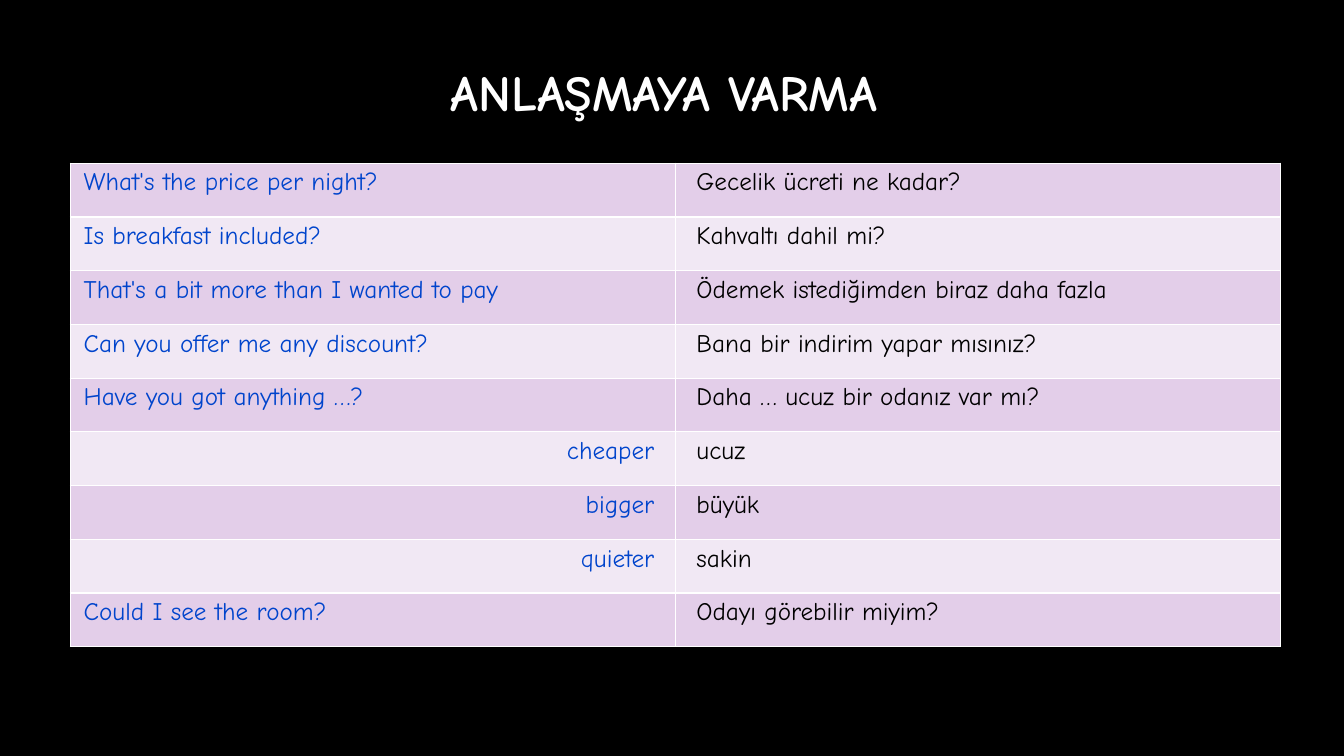
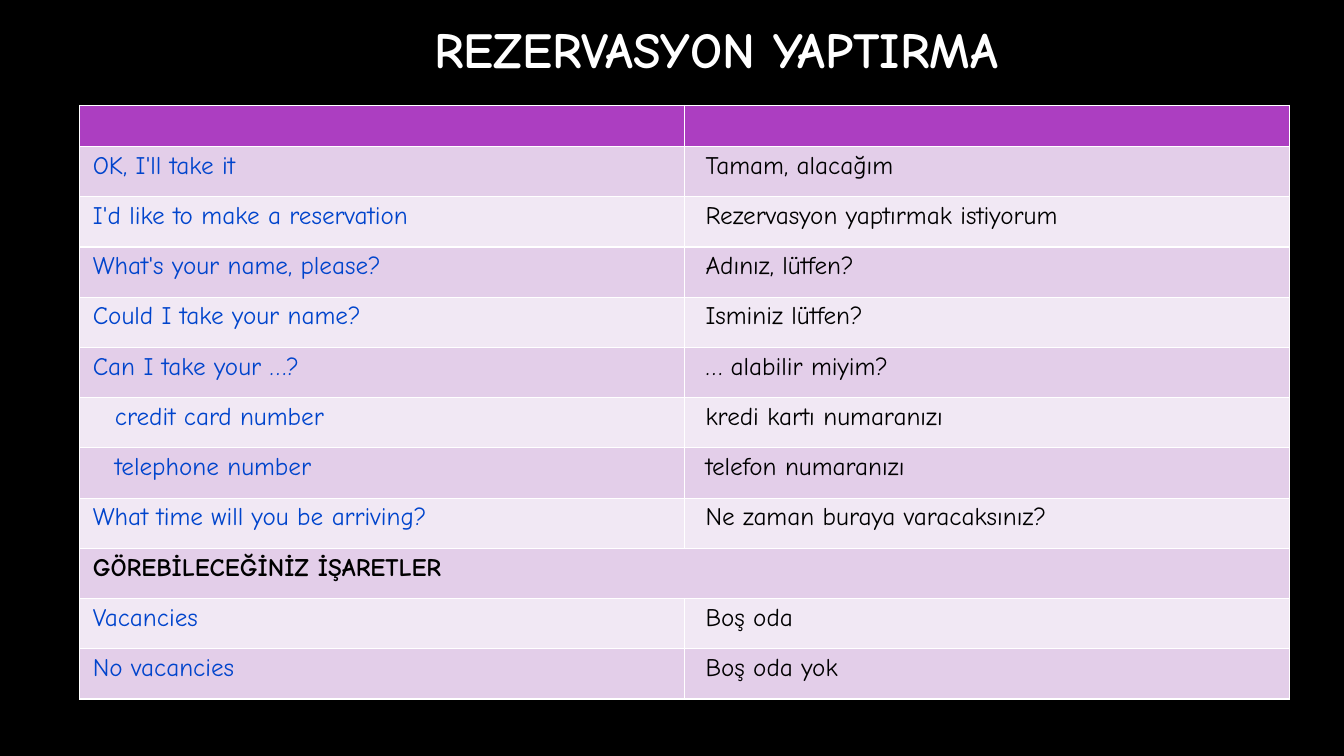
from dataclasses import dataclass

from lxml.etree import SubElement
from pptx import Presentation
from pptx.dml.color import RGBColor
from pptx.enum.text import MSO_ANCHOR, PP_ALIGN
from pptx.oxml.ns import qn
from pptx.util import Pt

# Shared look
FONT = "Comic Neue"
BLACK, WHITE, BLUE = "000000", "FFFFFF", "0044CC"
HEADER_FILL = "AC3EC1"
BAND_FILLS = ("E3CEE9", "F1E8F4")
OUTER, INNER, INDENT = 9.4, 15.1, 25.2  # side margins of the cells
COLUMN_WIDTH = 432
TITLE_WIDTH = 608.4


@dataclass
class Phrase:
    english: str
    turkish: str = ""
    left_margin: float = OUTER
    align: PP_ALIGN = PP_ALIGN.LEFT
    heading: bool = False


@dataclass
class Lesson:
    title: str
    title_left: float
    title_top: float
    title_height: float
    table_left: float
    table_top: float
    row_height: float
    phrases: list[Phrase]
    header_height: float = 0


def color(value: str) -> RGBColor:
    return RGBColor.from_string(value)


def write(frame, text: str, *, size: float = 18, ink: str = BLACK,
          bold: bool = False, align: PP_ALIGN = PP_ALIGN.LEFT) -> None:
    para = frame.paragraphs[0]
    para.alignment = align
    span = para.add_run()
    span.text = text
    span.font.name = FONT
    span.font.size = Pt(size)
    span.font.bold = bold
    span.font.color.rgb = color(ink)


def style_cell(cell, fill: str) -> None:
    """Give a cell white borders and a solid fill."""
    properties = cell._tc.get_or_add_tcPr()
    for side in ("lnL", "lnR", "lnT", "lnB"):
        line = SubElement(properties, qn(f"a:{side}"), w=str(Pt(1)))
        solid = SubElement(line, qn("a:solidFill"))
        SubElement(solid, qn("a:srgbClr"), val=WHITE)
    cell.fill.solid()
    cell.fill.fore_color.rgb = color(fill)


def set_margins(cell, left: float, right: float) -> None:
    cell.margin_left, cell.margin_right = Pt(left), Pt(right)
    cell.margin_top, cell.margin_bottom = Pt(3.6), Pt(11.5)


def add_title(page, lesson: Lesson) -> None:
    title = page.shapes.title
    title.left, title.top = Pt(lesson.title_left), Pt(lesson.title_top)
    title.width, title.height = Pt(TITLE_WIDTH), Pt(lesson.title_height)
    title.text_frame.vertical_anchor = MSO_ANCHOR.MIDDLE
    write(title.text_frame, lesson.title, size=36, ink=WHITE, bold=True,
          align=PP_ALIGN.CENTER)


def add_phrase_table(page, lesson: Lesson) -> None:
    heights = [lesson.row_height] * len(lesson.phrases)
    first = 0
    if lesson.header_height:
        heights.insert(0, lesson.header_height)
        first = 1
    table = page.shapes.add_table(
        len(heights), 2, Pt(lesson.table_left), Pt(lesson.table_top),
        Pt(2 * COLUMN_WIDTH), Pt(sum(heights))).table
    table.first_row = bool(first)
    for row, height in zip(table.rows, heights):
        row.height = Pt(height)

    # Empty header band
    if first:
        for cell in table.rows[0].cells:
            style_cell(cell, HEADER_FILL)

    # Phrases with alternating bands
    for index, phrase in enumerate(lesson.phrases):
        english, turkish = table.rows[index + first].cells
        for cell in (english, turkish):
            style_cell(cell, BAND_FILLS[index % 2])
        set_margins(english, phrase.left_margin, INNER)
        set_margins(turkish, INNER, OUTER)
        write(english.text_frame, phrase.english, bold=phrase.heading,
              ink=BLACK if phrase.heading else BLUE, align=phrase.align)
        if phrase.heading:
            english.merge(turkish)
        else:
            write(turkish.text_frame, phrase.turkish)


def add_lesson(deck, lesson: Lesson) -> None:
    page = deck.slides.add_slide(deck.slide_layouts.get_by_name("Title Only"))
    page.background.fill.solid()
    page.background.fill.fore_color.rgb = color(BLACK)
    add_title(page, lesson)
    add_phrase_table(page, lesson)


LESSONS = [
    Lesson(
        "ANLAŞMAYA VARMA", title_left=170, title_top=32.4, title_height=65.5,
        table_left=50.4, table_top=116.6, row_height=38.4,
        phrases=[
            Phrase("What's the price per night?", "Gecelik ücreti ne kadar?"),
            Phrase("Is breakfast included?", "Kahvaltı dahil mi?"),
            Phrase("That's a bit more than I wanted to pay",
                   "Ödemek istediğimden biraz daha fazla"),
            Phrase("Can you offer me any discount?",
                   "Bana bir indirim yapar mısınız?"),
            Phrase("Have you got anything …?",
                   "Daha … ucuz bir odanız var mı?"),
            Phrase("cheaper", "ucuz", INDENT, PP_ALIGN.RIGHT),
            Phrase("bigger", "büyük", INDENT, PP_ALIGN.RIGHT),
            Phrase("quieter", "sakin", INDENT, PP_ALIGN.RIGHT),
            Phrase("Could I see the room?", "Odayı görebilir miyim?"),
        ]),
    Lesson(
        "REZERVASYON YAPTIRMA", title_left=207.4, title_top=0,
        title_height=68.4, table_left=56.9, table_top=75.4,
        row_height=35.6, header_height=29.2,
        phrases=[
            Phrase("OK, I'll take it", "Tamam, alacağım"),
            Phrase("I'd like to make a reservation",
                   "Rezervasyon yaptırmak istiyorum"),
            Phrase("What's your name, please?", "Adınız, lütfen?"),
            Phrase("Could I take your name?", "Isminiz lütfen?"),
            Phrase("Can I take your …?", "… alabilir miyim?"),
            Phrase("credit card number", "kredi kartı numaranızı", INDENT),
            Phrase("telephone number", "telefon numaranızı", INDENT),
            Phrase("What time will you be arriving?",
                   "Ne zaman buraya varacaksınız?"),
            Phrase("GÖREBİLECEĞİNİZ İŞARETLER", heading=True),
            Phrase("Vacancies", "Boş oda"),
            Phrase("No vacancies", "Boş oda yok"),
        ]),
]


def main() -> None:
    deck = Presentation()
    deck.slide_width, deck.slide_height = Pt(960), Pt(540)
    for lesson in LESSONS:
        add_lesson(deck, lesson)
    deck.save("out.pptx")


if __name__ == "__main__":
    main()
